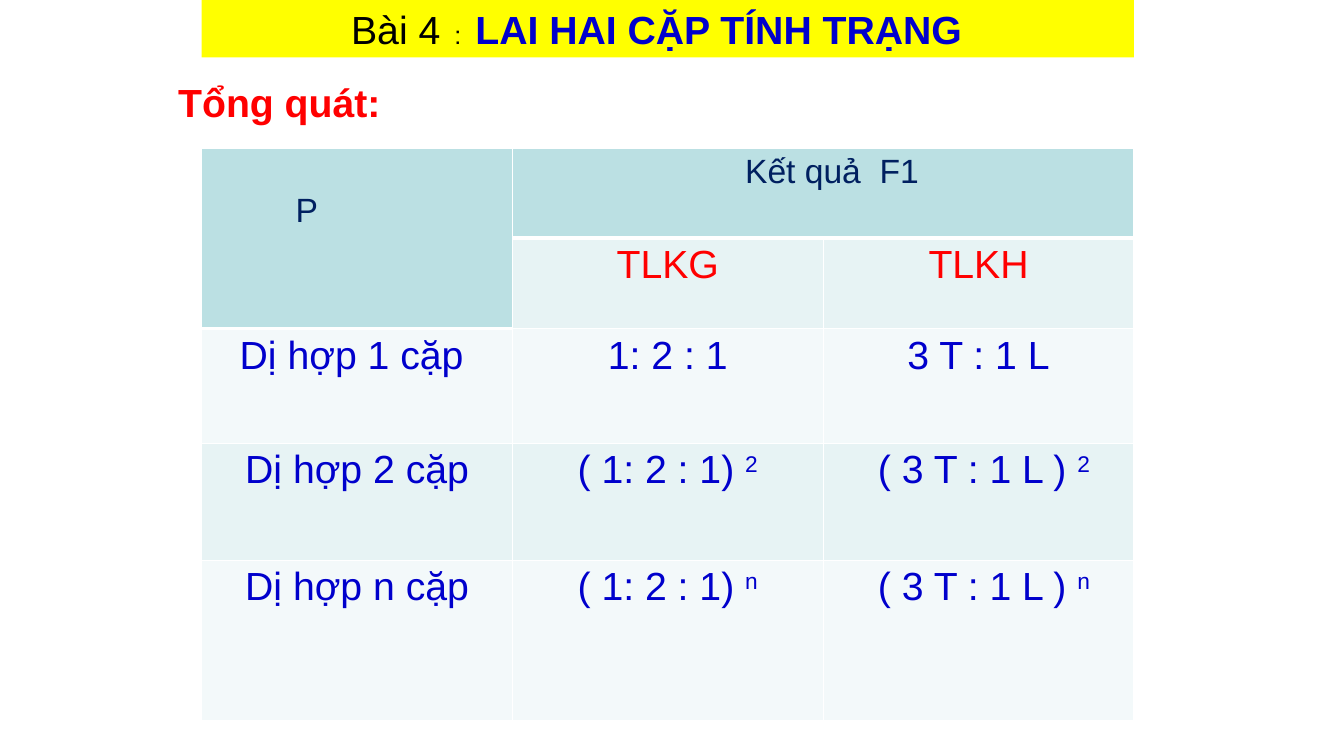
import dataclasses

import lxml.etree
import pptx
import pptx.dml.color
import pptx.enum.text
import pptx.oxml.ns
import pptx.util


@dataclasses.dataclass(frozen=True)
class Theme:
    """Colours and type sizes of the lesson."""
    font: str = "Arial"
    black: str = "000000"
    white: str = "FFFFFF"
    yellow: str = "FFFF00"
    red: str = "FF0000"
    blue: str = "0000CC"
    navy: str = "002060"
    header: str = "BBE0E3"
    band: str = "E7F3F4"
    pale: str = "F3F9FA"
    large: int = 28
    medium: int = 24
    small: int = 18


def rgb(colour):
    """Turn a hex string into a colour."""
    return pptx.dml.color.RGBColor.from_string(colour)


class LessonSlide:
    """Draws on one slide with a grid of 160 columns by 90 rows."""

    def __init__(self, deck, theme):
        """Add a slide that has only a title."""
        self.theme = theme
        self.column = deck.slide_width / 160
        self.row = deck.slide_height / 90
        self.slide = deck.slides.add_slide(deck.slide_layouts[5])

    def across(self, columns):
        """Length of a number of grid columns."""
        return pptx.util.Emu(round(columns * self.column))

    def down(self, rows):
        """Length of a number of grid rows."""
        return pptx.util.Emu(round(rows * self.row))

    def box(self, left, top, width, height):
        """Grid position as slide lengths."""
        return self.across(left), self.down(top), self.across(width), self.down(height)

    def add_words(self, paragraph, text, size, colour, bold=False, raised=False):
        """Add one formatted run."""
        run = paragraph.add_run()
        run.text = text
        run.font.name = self.theme.font
        run.font.size = pptx.util.Pt(size)
        run.font.bold = bold
        run.font.color.rgb = rgb(colour)
        if raised:
            run._r.get_or_add_rPr().set("baseline", "30000")

    def title(self, place, indent, runs):
        """Format the title placeholder as a filled banner."""
        banner = self.slide.shapes.title
        banner.left, banner.top, banner.width, banner.height = self.box(*place)
        banner.fill.solid()
        banner.fill.fore_color.rgb = rgb(self.theme.yellow)
        frame = banner.text_frame
        frame.auto_size = pptx.enum.text.MSO_AUTO_SIZE.NONE
        frame.margin_left = self.across(indent)
        frame.paragraphs[0].alignment = pptx.enum.text.PP_ALIGN.LEFT
        for run in runs:
            self.add_words(frame.paragraphs[0], *run)

    def label(self, place, text):
        """Add a bold red heading."""
        frame = self.slide.shapes.add_textbox(*self.box(*place)).text_frame
        frame.word_wrap = True
        self.add_words(frame.paragraphs[0], text, self.theme.large, self.theme.red, True)

    def table(self, place, heights):
        """Add a plain table with equal columns."""
        grid = self.slide.shapes.add_table(len(heights), 3, *self.box(*place)).table
        grid.first_row = grid.horz_banding = False
        for column in grid.columns:
            column.width = self.across(place[2] / 3)
        for row, height in zip(grid.rows, heights):
            row.height = self.down(height)
        return grid

    def surface(self, cell, colour, bottom=1):
        """Give a cell white borders and a fill."""
        properties = cell._tc.get_or_add_tcPr()
        for side, width in (("L", 1), ("R", 1), ("T", 1), ("B", bottom)):
            line = lxml.etree.SubElement(
                properties, pptx.oxml.ns.qn(f"a:ln{side}"), w=str(pptx.util.Pt(width)))
            fill = lxml.etree.SubElement(line, pptx.oxml.ns.qn("a:solidFill"))
            lxml.etree.SubElement(fill, pptx.oxml.ns.qn("a:srgbClr"), val=self.theme.white)
        cell.fill.solid()
        cell.fill.fore_color.rgb = rgb(colour)

    def entry(self, cell, text, size, colour, power=""):
        """Fill in a centred cell text with an optional exponent."""
        paragraph = cell.text_frame.paragraphs[0]
        paragraph.alignment = pptx.enum.text.PP_ALIGN.CENTER
        self.add_words(paragraph, text, size, colour)
        if power:
            self.add_words(paragraph, power, size, colour, raised=True)


def main():
    """Build the lesson slide."""
    theme = Theme()
    deck = pptx.Presentation()
    deck.slide_width = pptx.util.Inches(13.33)
    deck.slide_height = pptx.util.Inches(7.5)
    lesson = LessonSlide(deck, theme)

    lesson.title((24, 0, 111, 6.84), 17.8, [
        ("Bài 4", theme.large, theme.black),
        ("  :  ", theme.small, theme.black),
        ("LAI HAI CẶP TÍNH TRẠNG", theme.large, theme.blue, True),
    ])

    heights = [10.68, 10.8, 13.68, 13.92, 19.08]
    ratios = lesson.table((24, 17.64, 111, sum(heights)), heights)
    fills = [theme.header, theme.band, theme.pale, theme.band, theme.pale]
    for row, fill in enumerate(fills):
        for column in range(3):
            lesson.surface(ratios.cell(row, column), fill, 1 if row else 3)

    parents, results = ratios.cell(0, 0), ratios.cell(0, 1)
    parents.merge(ratios.cell(1, 0))
    results.merge(ratios.cell(0, 2))
    parents.margin_left, parents.margin_top = lesson.across(11.2), lesson.down(5.2)
    results.margin_left = lesson.across(3.3)
    lesson.add_words(parents.text_frame.paragraphs[0], "P", theme.medium, theme.navy)
    lesson.entry(results, "Kết quả  F1", theme.medium, theme.navy)
    for column, heading in enumerate(("TLKG", "TLKH"), 1):
        lesson.entry(ratios.cell(1, column), heading, theme.large, theme.red)

    crosses = [
        (("Dị hợp 1 cặp ",), ("1: 2 : 1",), ("3 T : 1 L",)),
        *(((f"Dị hợp {pairs} cặp",), ("( 1: 2 : 1) ", pairs), (" ( 3 T : 1 L ) ", pairs))
          for pairs in ("2", "n")),
    ]
    for row, cross in enumerate(crosses, 2):
        for column, (text, *power) in enumerate(cross):
            lesson.entry(ratios.cell(row, column), text, theme.large, theme.blue, *power)

    lesson.label((20.04, 8.76, 28.2, 6.84), "Tổng quát:")
    deck.save("out.pptx")


if __name__ == "__main__":
    main()
